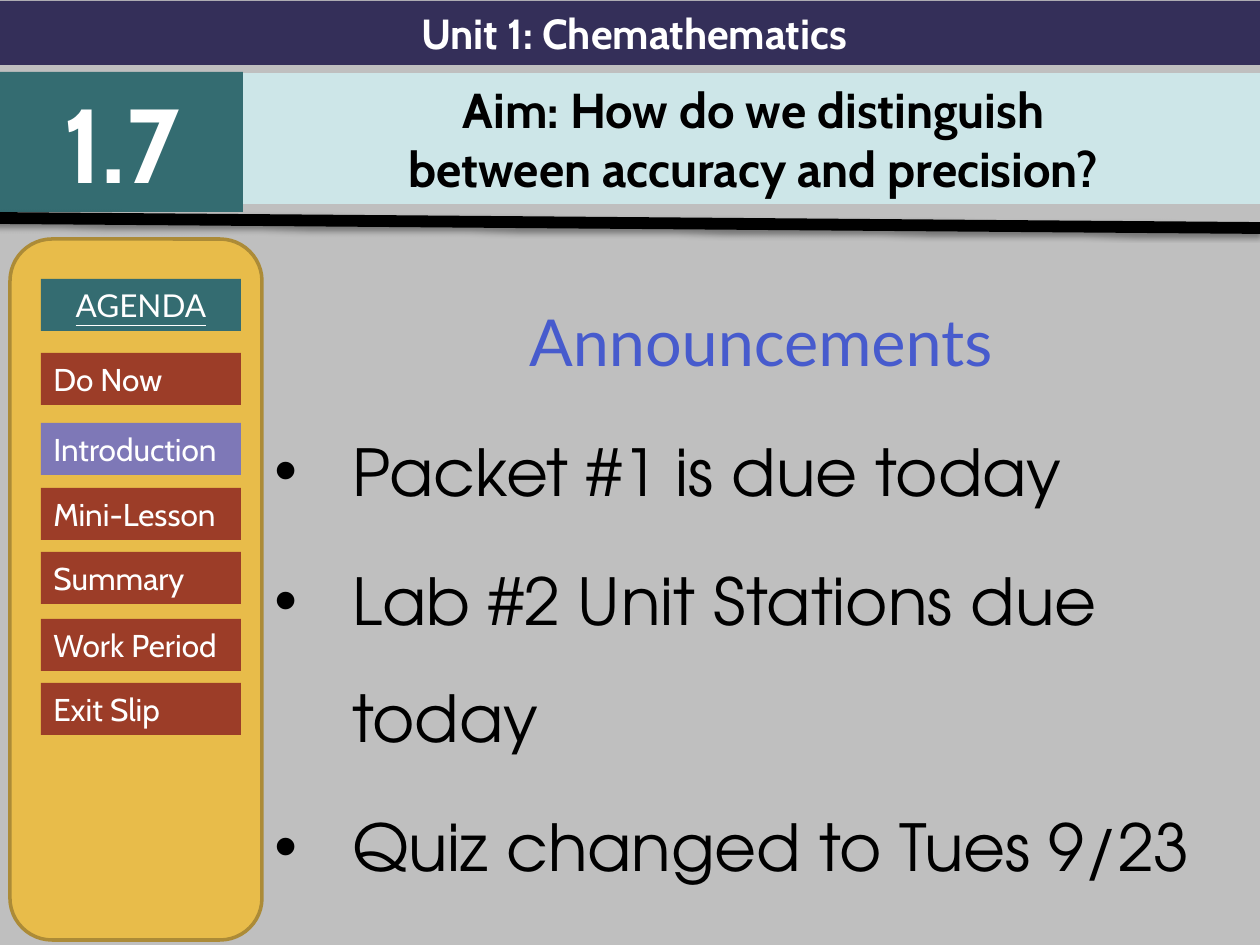
from lxml import etree
from pptx import Presentation
from pptx.dml.color import RGBColor
from pptx.enum.shapes import MSO_CONNECTOR, MSO_SHAPE
from pptx.enum.text import MSO_ANCHOR, PP_ALIGN
from pptx.oxml import parse_xml
from pptx.oxml.ns import nsdecls, qn
from pptx.util import Pt

RECTANGLE, ROUNDED = MSO_SHAPE.RECTANGLE, MSO_SHAPE.ROUNDED_RECTANGLE
STRAIGHT = MSO_CONNECTOR.STRAIGHT
LEFT, CENTER = PP_ALIGN.LEFT, PP_ALIGN.CENTER
MIDDLE = MSO_ANCHOR.MIDDLE
SCALE = 914400 // 126

UNIT = "Unit 1: Chemathematics"
LESSON = "1.7"
AIM = "Aim: How do we distinguish\nbetween accuracy and precision?"
HEADING = "Announcements"
ANNOUNCEMENTS = [
    "Packet #1 is due today",
    "Lab #2 Unit Stations due today",
    "Quiz changed to Tues 9/23",
]
TEAL, RUST, VIOLET, WHITE, BLACK = "346C71", "9C3D28", "7E78B7", "FFFFFF", "000000"
AGENDA = [
    ("Do Now", 353, RUST),
    ("Introduction", 423, VIOLET),
    ("Mini-Lesson", 488, RUST),
    ("Summary", 552, RUST),
    ("Work Period", 619, RUST),
    ("Exit Slip", 683, RUST),
]


def px(value):
    return value * SCALE


def color(value):
    return RGBColor.from_string(value)


def format_paragraph(paragraph, size, font, fill, bold=False, align=CENTER):
    paragraph.alignment = align
    for run in paragraph.runs:
        run.font.size = Pt(size)
        run.font.name = font
        run.font.bold = bold
        run.font.color.rgb = color(fill)


def add_box(shapes, kind, box, fill):
    shape = shapes.add_shape(kind, *map(px, box))
    shape.shadow.inherit = False
    shape.fill.solid()
    shape.fill.fore_color.rgb = color(fill)
    shape.line.fill.background()
    return shape


def add_label(shapes, text, box, fill, size, font="Cabin", bold=False, align=CENTER):
    shape = add_box(shapes, RECTANGLE, box, fill)
    shape.text_frame.text = text
    shape.text_frame.vertical_anchor = MIDDLE
    format_paragraph(shape.text_frame.paragraphs[0], size, font, WHITE, bold, align)
    return shape


def add_bullet(paragraph, indent):
    properties = paragraph._p.get_or_add_pPr()
    properties.set("marL", str(indent))
    properties.set("indent", str(-indent))
    font = etree.SubElement(properties, qn("a:buFont"))
    font.set("typeface", "Arial")
    bullet = etree.SubElement(properties, qn("a:buChar"))
    bullet.set("char", "•")


def add_title(slide):
    title = slide.shapes.title
    title.left, title.top, title.width, title.height = map(px, (243, 73, 1021, 131))
    title.fill.solid()
    title.fill.fore_color.rgb = color("CDE6E8")
    title.text_frame.text = AIM
    title.text_frame.vertical_anchor = MIDDLE
    for paragraph in title.text_frame.paragraphs:
        format_paragraph(paragraph, 28, "Cabin", BLACK, True)


def add_announcements(slide):
    text_box = slide.shapes.add_textbox(*map(px, (262, 257, 998, 688)))
    frame = text_box.text_frame
    frame.word_wrap = True
    frame.text = "\n".join([HEADING] + ANNOUNCEMENTS)
    for paragraph in frame.paragraphs:
        paragraph.line_spacing = 1.5
        paragraph.space_before = Pt(7.4)
    heading, *items = frame.paragraphs
    format_paragraph(heading, 37, "Lato", "475BCD")
    for paragraph in items:
        format_paragraph(paragraph, 37, "TeX Gyre Adventor", BLACK, align=LEFT)
        add_bullet(paragraph, px(78))


def add_divider(slide):
    divider = slide.shapes.add_connector(STRAIGHT, *map(px, (-6, 218, 1260, 228)))
    divider.line.color.rgb = color(BLACK)
    divider.line.width = Pt(6.75)
    divider._element.spPr.append(parse_xml(
        f'<a:effectLst {nsdecls("a")}>'
        f'<a:outerShdw blurRad="{Pt(3.1)}" dist="{Pt(1.6)}" dir="5400000" rotWithShape="0">'
        '<a:srgbClr val="000000"><a:alpha val="38000"/></a:srgbClr>'
        '</a:outerShdw></a:effectLst>'))


def add_agenda(slide):
    shapes = slide.shapes.add_group_shape().shapes
    panel = add_box(shapes, ROUNDED, (10, 239, 252, 701), "E8BC4A")
    panel.line.color.rgb = color("AC8B37")
    panel.line.width = Pt(2)
    header = add_label(shapes, "AGENDA", (41, 279, 200, 52), TEAL, 18, "Lato")
    header.text_frame.paragraphs[0].runs[0].font.underline = True
    for text, top, fill in AGENDA:
        add_label(shapes, text, (41, top, 200, 52), fill, 18, align=LEFT)


def main():
    presentation = Presentation()
    presentation.slide_width, presentation.slide_height = px(1260), px(945)
    slide = presentation.slides.add_slide(presentation.slide_layouts[5])
    slide.background.fill.solid()
    slide.background.fill.fore_color.rgb = color("BFBFBF")
    add_title(slide)
    add_announcements(slide)
    add_label(slide.shapes, UNIT, (0, 1, 1268, 64), "342F59", 24, bold=True)
    add_label(slide.shapes, LESSON, (0, 72, 243, 140), TEAL, 60, bold=True)
    add_divider(slide)
    add_agenda(slide)
    presentation.save("out.pptx")


if __name__ == "__main__":
    main()
